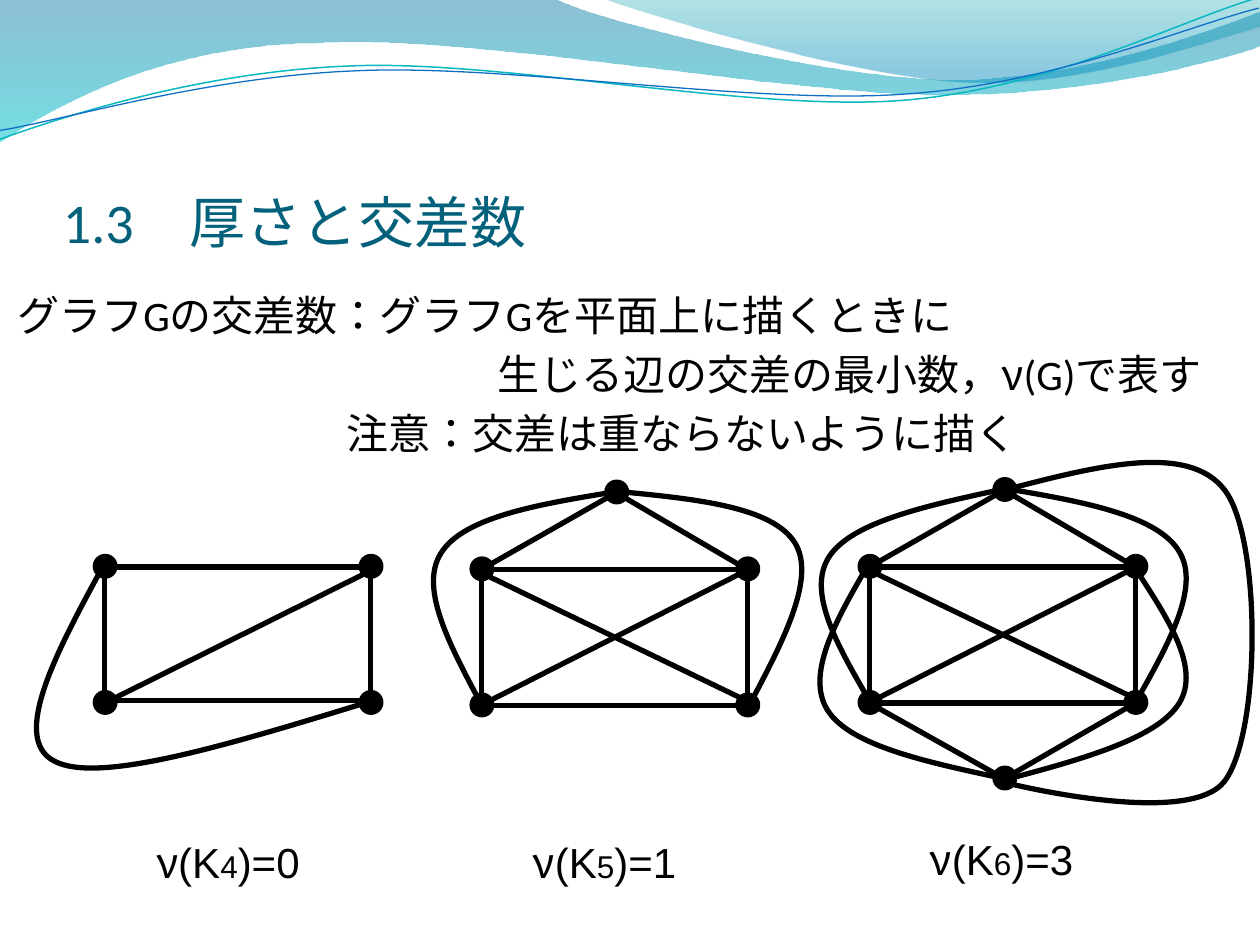
"""Build a slide on graph thickness and the crossing numbers of K4, K5 and K6."""
from lxml import etree
from pptx import Presentation
from pptx.dml.color import RGBColor
from pptx.enum import lang, shapes, text
from pptx.oxml.ns import qn
from pptx.util import Inches, Pt

BLACK = RGBColor(0x00, 0x00, 0x00)
TITLE = RGBColor(0x04, 0x61, 0x7B)
TEAL = RGBColor(0x0A, 0xB8, 0xBF)
BLUE = RGBColor(0x0F, 0x6F, 0xC6)
BACK_GRADIENT = [(0, RGBColor(0x00, 0x74, 0xA1), 45), (1, RGBColor(0x00, 0xC6, 0xCF), 55)]
FRONT_GRADIENT = [(0, RGBColor(0x00, 0xA1, 0xA9), 30), (0.8, RGBColor(0x00, 0x8B, 0xBF), 45)]
LATIN, LABEL, JAPANESE = "Calibri", "Arial", "Noto Sans CJK JP"

BANDS = [
    (BACK_GRADIENT, (0, -0.01), [
        [(4.4, -0.01)],
        [(4.76, 0.17), (6.64, 0.63), (7.58, 0.63)],
        [(8.53, 0.63), (9.58, 0.26), (10, 0.09)],
        [(10.01, 0.36)],
        [(9.83, 0.44), (8.7, 0.76), (7.46, 0.75)],
        [(6.22, 0.75), (3.82, 0.28), (2.57, 0.34)],
        [(1.29, 0.35), (0.46, 0.83), (-0.01, 1.13)]]),
    (FRONT_GRADIENT, (4.79, -0.01), [
        [(5.09, 0.11), (6.82, 0.62), (7.69, 0.65)],
        [(8.56, 0.69), (9.61, 0.32), (10, 0.21)],
        [(10, 0)]]),
]
WAVES = [
    (TEAL, 0.85, (-0.02, 0.87), [
        [(0.47, 0.72), (1.58, 0.41), (2.77, 0.42)],
        [(3.96, 0.42), (5.91, 0.93), (7.12, 0.9)],
        [(8.32, 0.87), (9.4, 0.36), (10, 0.22)]]),
    (BLUE, 0.75, (-0.02, 0.8), [
        [(0.46, 0.75), (1.64, 0.45), (2.83, 0.46)],
        [(4.03, 0.46), (5.96, 0.88), (7.16, 0.85)],
        [(8.35, 0.83), (9.42, 0.42), (10.01, 0.3)]]),
]
WAVE_TURN = 357.3

HEADING = [(0, [("1.3　厚さと交差数", LATIN, 32)])]
BODY = [
    (0, [("グラフGの交差数：グラフGを平面上に描くときに", LATIN, 24)]),
    (3.81, [("生じる辺の交差の最小数，", LATIN, 24), ("ν", JAPANESE, 24), ("(G)で表す", LATIN, 24)]),
    (2.61, [("注意：交差は重ならないように描く", LATIN, 24)]),
]

CORNERS = [(0, 0), (2.11, 0), (0, 1.08), (2.11, 1.08)]
APEX, FOOT = (1.07, -0.61), (1.07, 1.68)
SIDES = [((0, 0), (0, 0.99)), ((2.11, 0), (2.11, 1.08))]
K4_EDGES = SIDES + [((0, 0), (2.03, 0)), ((0, 1.08), (2.05, 0.06)), ((0.07, 1.06), (2.1, 1.06))]
K5_EDGES = SIDES + [((0, 0), APEX), (APEX, (2.11, 0)), ((0.04, 0), (2.07, 0)),
                    ((0.07, 1.08), (2.11, 1.08)),
                    ((2.06, 0.03), (0.07, 1.04)), ((2.06, 1.02), (0.07, 0.06))]
K6_EDGES = K5_EDGES + [((0, 1.08), FOOT), (FOOT, (2.11, 1.08))]
GRAPHS = [
    {"order": "4", "crossings": 0, "origin": (0.83, 4.5), "label": (1.14, 6.59),
     "dots": CORNERS, "edges": K4_EDGES},
    {"order": "5", "crossings": 1, "origin": (3.82, 4.52), "label": (4.13, 6.59),
     "dots": CORNERS + [APEX], "edges": K5_EDGES},
    {"order": "6", "crossings": 3, "origin": (6.9, 4.5), "label": (7.28, 6.57),
     "dots": CORNERS + [APEX, FOOT], "edges": K6_EDGES},
]
CURVED_EDGES = [
    ((0.82, 4.49), [[(0.45, 5.17), (0.08, 5.86), (0.43, 6.04)],
                    [(0.78, 6.23), (1.85, 5.9), (2.93, 5.57)]]),
    ((4.9, 3.9), [[(4.29, 4), (3.68, 4.1), (3.5, 4.39)],
                  [(3.32, 4.67), (3.58, 5.14), (3.83, 5.61)]]),
    ((4.9, 3.9), [[(5.52, 3.96), (6.13, 4.02), (6.31, 4.31)],
                  [(6.48, 4.59), (6.21, 5.1), (5.94, 5.61)]]),
    ((7.99, 3.88), [[(8.59, 3.98), (9.19, 4.09), (9.36, 4.38)],
                    [(9.53, 4.66), (9.27, 5.12), (9.01, 5.58)]]),
    ((7.97, 3.88), [[(7.37, 4.01), (6.76, 4.14), (6.58, 4.42)],
                    [(6.4, 4.7), (6.65, 5.13), (6.9, 5.56)]]),
    ((7.97, 3.89), [[(8.7, 3.7), (9.43, 3.51), (9.72, 3.89)],
                    [(10.01, 4.27), (10.01, 5.81), (9.72, 6.2)],
                    [(9.43, 6.58), (7.97, 6.21), (7.97, 6.21)]]),
    ((6.88, 4.5), [[(6.63, 4.93), (6.39, 5.36), (6.57, 5.64)],
                   [(6.75, 5.92), (7.36, 6.05), (7.97, 6.18)]]),
    ((9.01, 4.51), [[(9.27, 4.91), (9.53, 5.3), (9.36, 5.58)],
                    [(9.19, 5.86), (8.58, 6.03), (7.97, 6.19)]]),
]
DOT = 0.17


def add_curve(page, start, segments, color=None, width=3, gradient=None, turn=0):
    """Draw an open stroked curve, or a closed band when a gradient is given."""
    builder = page.shapes.build_freeform(Inches(start[0]), Inches(start[1]))
    points = [(Inches(x), Inches(y)) for segment in segments for x, y in segment]
    builder.add_line_segments(points, close=bool(gradient))
    curve = builder.convert_to_shape()
    lines = iter(list(curve._element.iter(qn("a:lnTo"))))
    for segment in segments:
        pieces = [next(lines) for _ in segment]
        if len(pieces) == 3:
            bend = etree.Element(qn("a:cubicBezTo"))
            pieces[0].addprevious(bend)
            for piece in pieces:
                bend.append(piece[0])
                piece.getparent().remove(piece)
    curve.shadow.inherit = False
    curve.rotation = turn
    if not gradient:
        curve.fill.background()
        curve.line.color.rgb = color
        curve.line.width = Pt(width)
        return
    curve.line.fill.background()
    curve.fill.gradient()
    curve.fill.gradient_angle = 270
    for stop, (position, shade, _) in zip(curve.fill.gradient_stops, gradient):
        stop.position = position
        stop.color.rgb = shade
    for node, (_, _, opacity) in zip(curve._element.spPr.iter(qn("a:srgbClr")), gradient):
        etree.SubElement(node, qn("a:alpha"), val=str(opacity * 1000))


def add_text(page, paragraphs, place, color=BLACK, anchor=text.MSO_ANCHOR.TOP,
             margins=(0.1, 0.05, 0.1, 0.05), wrap=True, before=0):
    """Write paragraphs given as (indent, [(words, font, size), ...])."""
    frame = page.shapes.add_textbox(*map(Inches, place)).text_frame
    frame.word_wrap = wrap
    frame.vertical_anchor = anchor
    (frame.margin_left, frame.margin_top,
     frame.margin_right, frame.margin_bottom) = map(Inches, margins)
    for index, (indent, spans) in enumerate(paragraphs):
        para = frame.add_paragraph() if index else frame.paragraphs[0]
        para.space_before = Pt(before)
        para._p.get_or_add_pPr().set("marL", str(Inches(indent)))
        for words, font, size in spans:
            span = para.add_run()
            span.text = words
            span.font.name = font
            span.font.size = Pt(size)
            span.font.color.rgb = color
            span.font.language_id = lang.MSO_LANGUAGE_ID.JAPANESE
            etree.SubElement(span._r.rPr, qn("a:ea"), typeface=JAPANESE)


def add_graph(page, graph):
    """Draw the straight edges, the dots and the label of one complete graph."""
    left, top = graph["origin"]
    for (x1, y1), (x2, y2) in graph["edges"]:
        ends = map(Inches, (left + x1, top + y1, left + x2, top + y2))
        edge = page.shapes.add_connector(shapes.MSO_CONNECTOR.STRAIGHT, *ends)
        edge.line.color.rgb = BLACK
        edge.line.width = Pt(3)
        etree.SubElement(edge._element.spPr, qn("a:effectLst"))
    for x, y in graph["dots"]:
        box = map(Inches, (left + x - 0.08, top + y - 0.09, DOT, DOT))
        dot = page.shapes.add_shape(shapes.MSO_SHAPE.OVAL, *box)
        dot.shadow.inherit = False
        dot.fill.solid()
        dot.fill.fore_color.rgb = BLACK
        dot.line.color.rgb = BLACK
        dot.line.width = Pt(2)
    label = [("ν", JAPANESE, 24), ("(K", LABEL, 24), (graph["order"], LABEL, 18),
             (f")={graph['crossings']}", LABEL, 24)]
    add_text(page, [(0, label)], (*graph["label"], 1.51, 0.5), wrap=False)


def main():
    """Assemble the slide and save it."""
    deck = Presentation()
    deck.slide_width, deck.slide_height = Inches(10), Inches(7.5)
    page = deck.slides.add_slide(deck.slide_layouts[6])
    for gradient, start, segments in BANDS:
        add_curve(page, start, segments, gradient=gradient)
    for color, width, start, segments in WAVES:
        add_curve(page, start, segments, color, width, turn=WAVE_TURN)
    add_text(page, HEADING, (0.5, 0.77, 9, 1.25), color=TITLE,
             anchor=text.MSO_ANCHOR.BOTTOM, margins=(0, 0.05, 0, 0))
    add_text(page, BODY, (0.04, 2.25, 9.96, 4.8), before=4.8)
    for graph in GRAPHS:
        add_graph(page, graph)
    for start, segments in CURVED_EDGES:
        add_curve(page, start, segments, BLACK)
    deck.save("out.pptx")


if __name__ == "__main__":
    main()
